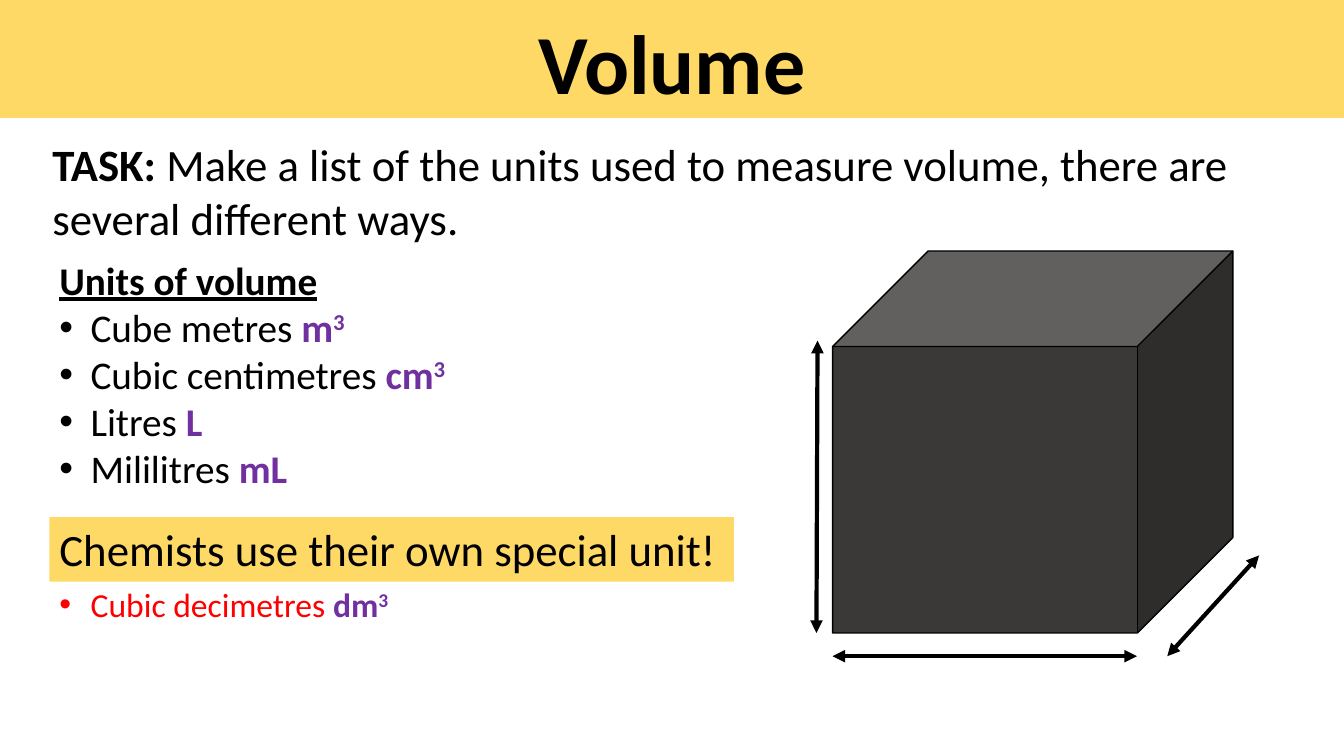
from lxml.etree import SubElement
from pptx import Presentation
from pptx.dml.color import RGBColor
from pptx.enum.shapes import MSO_CONNECTOR, MSO_SHAPE
from pptx.enum.text import MSO_ANCHOR, PP_ALIGN
from pptx.oxml.ns import qn
from pptx.util import Inches, Pt

BLACK = RGBColor(0, 0, 0)
YELLOW = RGBColor(0xFF, 0xD9, 0x66)
CHARCOAL = RGBColor(0x3B, 0x38, 0x38)
PURPLE = RGBColor(0x70, 0x30, 0xA0)
RED = RGBColor(0xFF, 0, 0)

deck = Presentation()
deck.slide_width, deck.slide_height = Inches(13.33), Inches(7.5)
page = deck.slides.add_slide(deck.slide_layouts[6])


def place(*shares):
    """Turn alternating x and y percentages of the slide into lengths."""
    sides = (deck.slide_width, deck.slide_height)
    return [round(sides[i % 2] * share / 100) for i, share in enumerate(shares)]


def add_span(para, text, size, color=BLACK, bold=False):
    span = para.add_run()
    span.text = text
    span.font.name = "Calibri"
    span.font.size = Pt(size)
    span.font.color.rgb = color
    span.font.bold = bold
    return span


# Title band, cube and highlighted statement
shapes = []
for kind, area, fill in (
    (MSO_SHAPE.RECTANGLE, (0, 0, 100, 15.6), YELLOW),
    (MSO_SHAPE.CUBE, (61.95, 33.2, 29.78, 50.53), CHARCOAL),
    (MSO_SHAPE.RECTANGLE, (3.68, 68.4, 50.93, 8.53), YELLOW),
):
    shape = page.shapes.add_shape(kind, *place(*area))
    shape.shadow.inherit = False
    shape.fill.solid()
    shape.fill.fore_color.rgb = fill
    shape.line.fill.background()
    shapes.append(shape)
title, cube, statement = shapes

cube.line.color.rgb = BLACK
cube.line.width = Pt(1)

title.text_frame.vertical_anchor = MSO_ANCHOR.BOTTOM
heading = title.text_frame.paragraphs[0]
heading.alignment = PP_ALIGN.CENTER
heading.line_spacing = 0.9
add_span(heading, "Volume", 60, bold=True)

statement.text_frame.vertical_anchor = MSO_ANCHOR.TOP
sentence = statement.text_frame.paragraphs[0]
sentence.alignment = PP_ALIGN.LEFT
add_span(sentence, "Chemists use their own special unit!", 32)

# Text boxes
frames = []
for area in (
    (3.15, 17.47, 93.6, 15.73),
    (3.68, 33.2, 30.68, 36.8),
    (3.68, 76.53, 26.33, 6.67),
):
    frame = page.shapes.add_textbox(*place(*area)).text_frame
    frame.word_wrap = True
    frames.append(frame)
task, units, chemist_unit = frames

add_span(task.paragraphs[0], "TASK: ", 32, bold=True)
add_span(task.paragraphs[0], "Make a list of the units used to measure volume, "
         "there are several different ways.", 32)
add_span(units.paragraphs[0], "Units of volume", 28, bold=True).font.underline = True

# Bulleted units: name, symbol and power
for para, name, symbol, power, size, color in (
    (units.add_paragraph(), "Cube metres ", "m", "3", 28, BLACK),
    (units.add_paragraph(), "Cubic centimetres ", "cm", "3", 28, BLACK),
    (units.add_paragraph(), "Litres ", "L", "", 28, BLACK),
    (units.add_paragraph(), "Mililitres ", "mL", "", 28, BLACK),
    (chemist_unit.paragraphs[0], "Cubic decimetres ", "dm", "3", 24, RED),
):
    properties = para._p.get_or_add_pPr()
    properties.set("marL", str(Inches(0.31)))
    properties.set("indent", str(-Inches(0.31)))
    SubElement(properties, qn("a:buFont"), typeface="Arial")
    SubElement(properties, qn("a:buChar"), char="•")
    add_span(para, name, size, color)
    add_span(para, symbol, size, PURPLE, True)
    if power:
        exponent = add_span(para, power, size, PURPLE, True)
        exponent.font._element.set("baseline", "30000")

# Double-headed arrows for width, depth and height
for ends in (
    (61.95, 86.8, 84.6, 86.8),
    (86.85, 86.8, 93.68, 73.47),
    (60.75, 83.73, 60.83, 45.07),
):
    arrow = page.shapes.add_connector(MSO_CONNECTOR.STRAIGHT, *place(*ends))
    arrow.line.color.rgb = BLACK
    arrow.line.width = Pt(3)
    outline = arrow.line._get_or_add_ln()
    for end in ("a:headEnd", "a:tailEnd"):
        SubElement(outline, qn(end), type="triangle")
    SubElement(arrow._element.spPr, qn("a:effectLst"))

deck.save("out.pptx")
